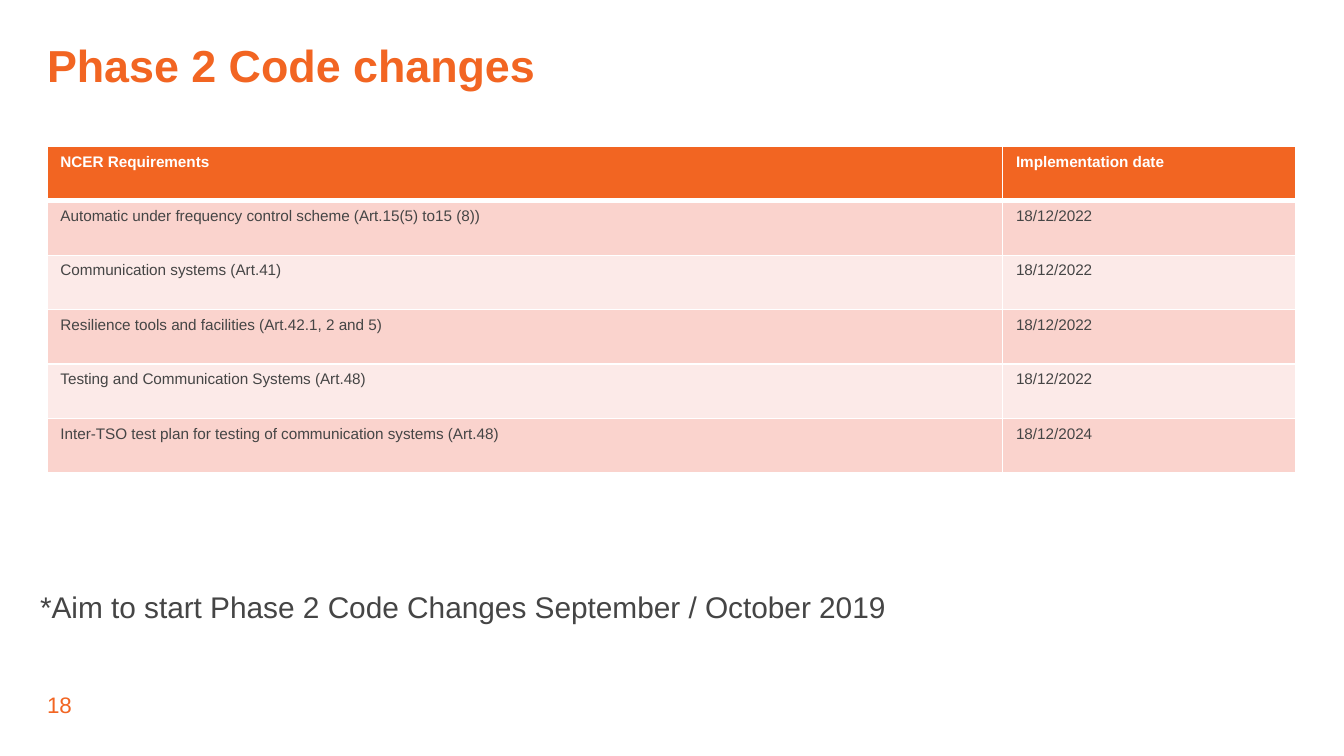
from lxml import etree
from pptx import Presentation
from pptx.dml.color import RGBColor
from pptx.oxml.ns import qn
from pptx.util import Inches, Pt

ORANGE = RGBColor(0xF2, 0x65, 0x22)
GREY = RGBColor(0x45, 0x45, 0x45)
WHITE = RGBColor(0xFF, 0xFF, 0xFF)
ROSE = RGBColor(0xFA, 0xD3, 0xCD)
PALE = RGBColor(0xFC, 0xEA, 0xE8)

ROWS = [
    ("NCER Requirements", "Implementation date"),
    ("Automatic under frequency control scheme (Art.15(5) to15 (8))", "18/12/2022"),
    ("Communication systems (Art.41)", "18/12/2022"),
    ("Resilience tools and facilities (Art.42.1, 2 and 5)", "18/12/2022"),
    ("Testing and Communication Systems (Art.48)", "18/12/2022"),
    ("Inter-TSO test plan for testing of communication systems (Art.48)", "18/12/2024"),
]
WIDTHS = [7.11, 2.18]


def style(para, size, color, bold=False):
    font = para.runs[0].font
    font.name = "Arial"
    font.size = Pt(size)
    font.bold = bold
    font.color.rgb = color


def add_edge(cell, side, width):
    props = cell._tc.get_or_add_tcPr()
    line = etree.SubElement(props, qn(f"a:{side}"), w=str(Pt(width)))
    fill = etree.SubElement(line, qn("a:solidFill"))
    etree.SubElement(fill, qn("a:srgbClr"), val=str(WHITE))


# Wide 16:9 slide
prs = Presentation()
prs.slide_width = Inches(10)
prs.slide_height = Inches(10) * 9 // 16
slide = prs.slides.add_slide(prs.slide_layouts[6])

# Title, footnote and page number: text, place, inset sides, size, colour, bold
texts = [
    ("Phase 2 Code changes", (0.35, 0.36, 9.29, 0.32), (0, 0), 24, ORANGE, True),
    ("*Aim to start Phase 2 Code Changes September / October 2019",
     (0.2, 4.33, 8.66, 0.37), (0.1, 0.05), 16, GREY, False),
    ("18", (0.35, 5.14, 0.91, 0.2), (0, 0), 12, ORANGE, False),
]
for text, place, inset, size, color, bold in texts:
    box = slide.shapes.add_textbox(*[Inches(n) for n in place])
    frame = box.text_frame
    frame.word_wrap = True
    frame.margin_left = frame.margin_right = Inches(inset[0])
    frame.margin_top = frame.margin_bottom = Inches(inset[1])
    frame.text = text
    para = frame.paragraphs[0]
    style(para, size, color, bold)
    if bold:
        para.line_spacing = 0.8

# Requirements table
table = slide.shapes.add_table(
    len(ROWS), len(WIDTHS),
    Inches(0.35), Inches(1.09), Inches(sum(WIDTHS)), Inches(2.43)).table
for col, width in zip(table.columns, WIDTHS):
    col.width = Inches(width)

for r, row in enumerate(ROWS):
    head = r == 0
    for c, text in enumerate(row):
        cell = table.cell(r, c)
        cell.text = text
        style(cell.text_frame.paragraphs[0], 8.2, WHITE if head else GREY, head)
        # The rule under the header row is thicker
        for side in ("lnL", "lnR", "lnT", "lnB"):
            thick = (head and side == "lnB") or (r == 1 and side == "lnT")
            add_edge(cell, side, 3 if thick else 1)
        cell.fill.solid()
        cell.fill.fore_color.rgb = ORANGE if head else ROSE if r % 2 else PALE

prs.save("out.pptx")
